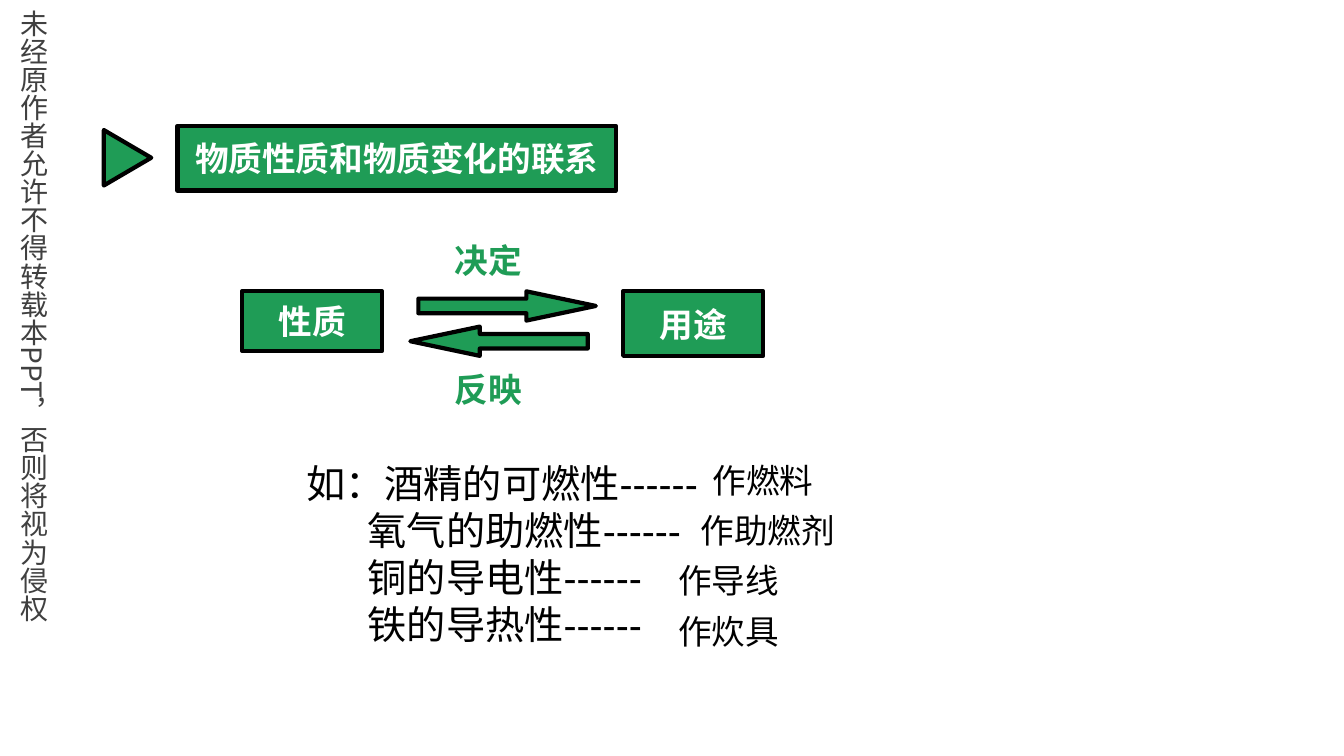
"""Build a slide on how the properties of a substance relate to its uses."""
from lxml import etree
from pptx import Presentation
from pptx.dml.color import RGBColor
from pptx.enum.shapes import MSO_SHAPE
from pptx.enum.text import MSO_ANCHOR, MSO_AUTO_SIZE, PP_ALIGN
from pptx.oxml.ns import qn
from pptx.util import Inches, Pt

GREEN = RGBColor(0x1F, 0x9C, 0x56)
BLACK = RGBColor(0x00, 0x00, 0x00)
WHITE = RGBColor(0xFF, 0xFF, 0xFF)
GRAY = RGBColor(0x40, 0x40, 0x40)
LATIN_FONT = "Arial"
CHINESE_FONT = "Noto Sans CJK SC"
RECTANGLE = MSO_SHAPE.RECTANGLE
TRIANGLE = MSO_SHAPE.ISOSCELES_TRIANGLE
RIGHT_ARROW = MSO_SHAPE.RIGHT_ARROW
LEFT_ARROW = MSO_SHAPE.LEFT_ARROW
CENTER = PP_ALIGN.CENTER
LEFT = PP_ALIGN.LEFT
MIDDLE = MSO_ANCHOR.MIDDLE
TOP = MSO_ANCHOR.TOP
NO_AUTOFIT = MSO_AUTO_SIZE.NONE

PROPERTIES = ["如：酒精的可燃性------", "氧气的助燃性------",
              "铜的导电性------", "铁的导热性------"]
USES = [("作燃料", 6.97, 1.2), ("作助燃剂", 6.85, 1.53),
        ("作导线", 6.63, 1.2), ("作炊具", 6.63, 1.2)]


def format_paragraph(paragraph, size, color, name=LATIN_FONT, bold=False):
    font = paragraph.font
    font.size = Pt(size)
    font.bold = bold
    font.name = name
    font.color.rgb = color
    defaults = paragraph._p.get_or_add_pPr().get_or_add_defRPr()
    etree.SubElement(defaults, qn("a:ea"), typeface=CHINESE_FONT)


def style_outline(shape):
    shape.fill.solid()
    shape.fill.fore_color.rgb = GREEN
    shape.line.color.rgb = BLACK
    shape.line.width = Pt(3)


def write_label(shape, text, color):
    frame = shape.text_frame
    frame.text = text
    frame.word_wrap = True
    frame.auto_size = NO_AUTOFIT
    frame.vertical_anchor = MIDDLE
    frame.margin_left = frame.margin_right = Inches(0.1)
    frame.margin_top = frame.margin_bottom = Inches(0.12)
    paragraph = frame.paragraphs[0]
    paragraph.alignment = CENTER
    format_paragraph(paragraph, 24, color, CHINESE_FONT, True)


def add_title(slide, text, left, top, width, height):
    title = slide.shapes.title
    title.left, title.top = Inches(left), Inches(top)
    title.width, title.height = Inches(width), Inches(height)
    style_outline(title)
    write_label(title, text, WHITE)


def add_green_shape(slide, kind, left, top, width, height):
    shape = slide.shapes.add_shape(kind, Inches(left), Inches(top),
                                   Inches(width), Inches(height))
    shape.shadow.inherit = False
    style_outline(shape)
    return shape


def add_arrow(slide, kind, left, top):
    arrow = add_green_shape(slide, kind, left, top, 1.76, 0.29)
    arrow.adjustments[0] = 0.5
    arrow.adjustments[1] = 2.374


def add_text_box(slide, left, top, width, height):
    box = slide.shapes.add_textbox(Inches(left), Inches(top),
                                   Inches(width), Inches(height))
    box.text_frame.word_wrap = True
    return box


def add_lines(slide, lines, left, top, width, height, size, indent=0):
    frame = add_text_box(slide, left, top, width, height).text_frame
    frame.vertical_anchor = TOP
    frame.text = "\n".join(lines)
    for index, paragraph in enumerate(frame.paragraphs):
        paragraph.alignment = LEFT
        if index:
            properties = paragraph._p.get_or_add_pPr()
            properties.set("marL", str(Inches(indent)))
            properties.set("indent", "0")
        format_paragraph(paragraph, size, BLACK)


def add_vertical_notice(slide, text):
    frame = add_text_box(slide, 0, 0, 0.71, 7.36).text_frame
    frame.text = text
    frame._txBody.bodyPr.set("vert", "eaVert")
    paragraph = frame.paragraphs[0]
    paragraph.line_spacing = 1.5
    format_paragraph(paragraph, 20, GRAY, CHINESE_FONT)


def main():
    presentation = Presentation()
    presentation.slide_width = Inches(13.33)
    presentation.slide_height = Inches(7.5)
    slide = presentation.slides.add_slide(presentation.slide_layouts[5])

    add_title(slide, "物质性质和物质变化的联系", 1.76, 1.25, 4.35, 0.64)
    marker = add_green_shape(slide, TRIANGLE, 0.99, 1.33, 0.55, 0.47)
    marker.rotation = 90

    for text, left, height in [("性质", 2.4, 0.59), ("用途", 6.18, 0.64)]:
        box = add_green_shape(slide, RECTANGLE, left, 2.89, 1.39, height)
        write_label(box, text, WHITE)
    add_arrow(slide, RIGHT_ARROW, 4.15, 2.89)
    add_arrow(slide, LEFT_ARROW, 4.07, 3.24)
    for text, top in [("决定", 2.26), ("反映", 3.54)]:
        write_label(add_text_box(slide, 4.15, top, 1.39, 0.64), text, GREEN)

    add_lines(slide, PROPERTIES, 2.94, 4.51, 4.85, 1.98, 28, 0.61)
    for row, (text, left, width) in enumerate(USES):
        add_lines(slide, [text], left, 4.51 + 0.5 * row, width, 0.5, 24)
    add_vertical_notice(slide, "未经原作者允许不得转载本PPT，否则将视为侵权")

    presentation.save("out.pptx")


if __name__ == "__main__":
    main()
